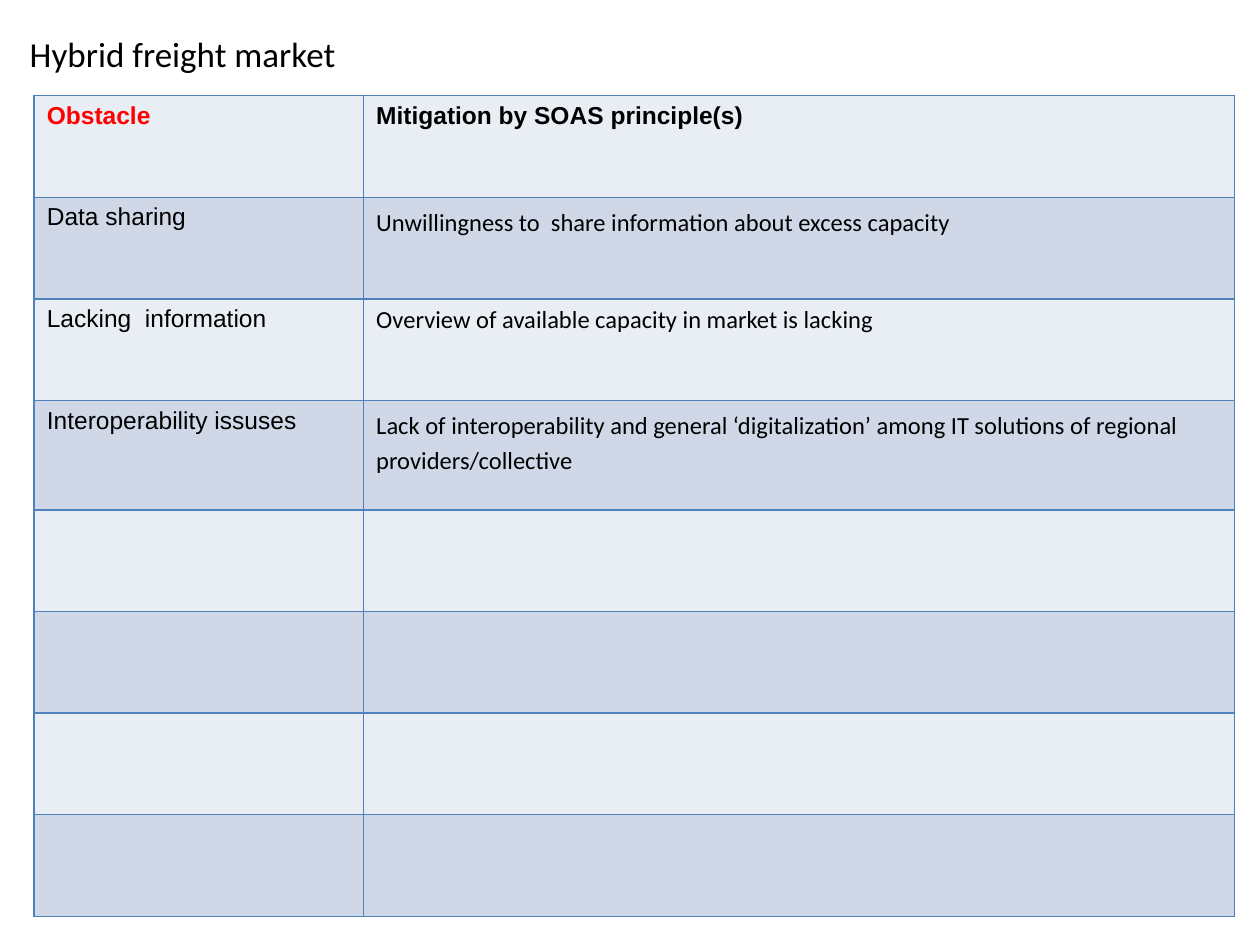
from lxml import etree
from pptx import Presentation
from pptx import util as u
from pptx.dml.color import RGBColor
from pptx.enum import text
from pptx.oxml import ns

HUES = {"ink": "000000", "alert": "FF0000", "line": "4F81BD",
        "light": "E9EDF4", "dark": "D0D8E8"}
ROWS = [
    ("Obstacle", "Mitigation by SOAS principle(s)"),
    ("Data sharing", "Unwillingness to  share information about excess capacity"),
    ("Lacking  information", "Overview of available capacity in market is lacking"),
    ("Interoperability issuses",
     "Lack of interoperability and general ‘digitalization’ among IT solutions "
     "of regional providers/collective"),
] + [("", "")] * 4


class Deck:
    """Hold the style and the current slide."""

    def __init__(self):
        self.prs = Presentation()
        self.prs.slide_width, self.prs.slide_height = u.Cm(25.4), u.Cm(19.05)
        self.slide = self.prs.slides.add_slide(self.prs.slide_layouts[6])

    def style(self, para, size, face="Calibri", hue="ink", bold=False):
        for run in para.runs:
            font = run.font
            font.size, font.name, font.bold = u.Pt(size), face, bold
            font.color.rgb = RGBColor.from_string(HUES[hue])

    def title(self, words, left, top, width, height):
        box = self.slide.shapes.add_textbox(*map(u.Cm, (left, top, width, height)))
        frame = box.text_frame
        frame.word_wrap = True
        frame.vertical_anchor = text.MSO_ANCHOR.MIDDLE
        frame.margin_left = frame.margin_right = u.Cm(0.1)
        frame.margin_top = frame.margin_bottom = u.Cm(0.1)
        frame.text = words
        self.style(frame.paragraphs[0], 20)

    def border(self, cell):
        props = cell._tc.get_or_add_tcPr()
        for index, side in enumerate(("lnL", "lnR", "lnT", "lnB")):
            line = etree.Element(ns.qn("a:" + side), w=str(u.Pt(1)))
            fill = etree.SubElement(line, ns.qn("a:solidFill"))
            etree.SubElement(fill, ns.qn("a:srgbClr"), val=HUES["line"])
            props.insert(index, line)

    def cell(self, cell, words, fill, **look):
        cell.fill.solid()
        cell.fill.fore_color.rgb = RGBColor.from_string(HUES[fill])
        self.border(cell)
        cell.text_frame.text = words
        self.style(cell.text_frame.paragraphs[0], 14, **look)

    def table(self, rows, left, top, widths, heights):
        size = left, top, sum(widths), sum(heights)
        frame = self.slide.shapes.add_table(len(rows), len(widths), *map(u.Cm, size))
        grid = frame.table
        for col, width in zip(grid.columns, widths):
            col.width = u.Cm(width)
        for r, (row, height) in enumerate(zip(rows, heights)):
            grid.rows[r].height = u.Cm(height)
            for c, words in enumerate(row):
                self.cell(grid.cell(r, c), words, "dark" if r % 2 else "light",
                          face="Arial" if r == 0 or c == 0 else "Calibri",
                          hue="alert" if r == c == 0 else "ink", bold=r == 0)
        return grid


def main():
    deck = Deck()
    deck.title("Hybrid freight market", 0.5, 0.54, 22.86, 1.07)
    heights = [2.05] * 3 + [2.2] + [2.05] * 4
    grid = deck.table(ROWS, 0.69, 1.93, (6.64, 17.56), heights)
    for r in (1, 3):
        grid.cell(r, 1).text_frame.paragraphs[0].line_spacing = 1.15
    deck.prs.save("out.pptx")


if __name__ == "__main__":
    main()
